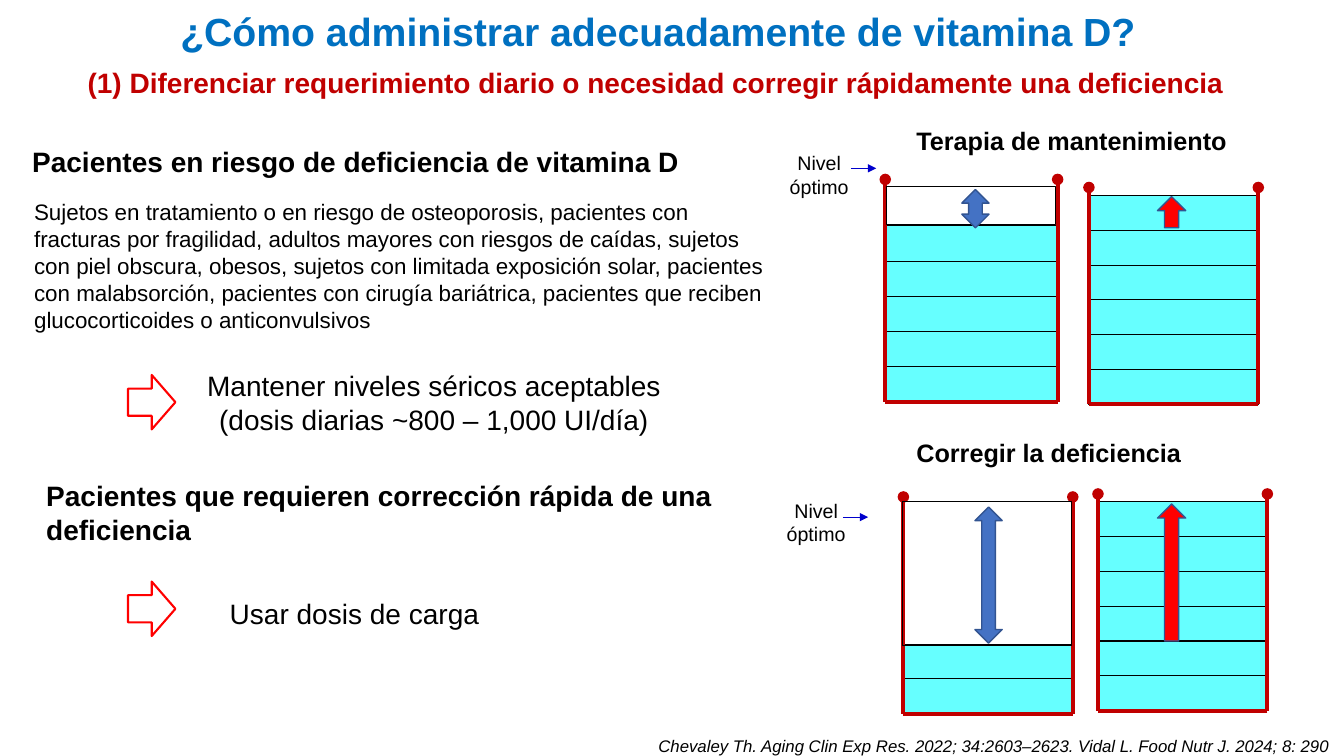
from lxml import etree
from pptx import Presentation
from pptx.dml.color import RGBColor
from pptx.enum.shapes import MSO_CONNECTOR, MSO_SHAPE
from pptx.enum.text import MSO_ANCHOR, PP_ALIGN
from pptx.oxml.ns import qn
from pptx.util import Inches, Pt

RECTANGLE = MSO_SHAPE.RECTANGLE
UP_ARROW = MSO_SHAPE.UP_ARROW
UP_DOWN_ARROW = MSO_SHAPE.UP_DOWN_ARROW
RIGHT_ARROW = MSO_SHAPE.RIGHT_ARROW
STRAIGHT = MSO_CONNECTOR.STRAIGHT
LEFT, CENTER, RIGHT = PP_ALIGN.LEFT, PP_ALIGN.CENTER, PP_ALIGN.RIGHT
TOP = MSO_ANCHOR.TOP

BLACK = RGBColor(0x00, 0x00, 0x00)
TITLE_BLUE = RGBColor(0x00, 0x70, 0xC0)
DARK_RED = RGBColor(0xC0, 0x00, 0x00)
RED = RGBColor(0xFF, 0x00, 0x00)
WATER = RGBColor(0x66, 0xFF, 0xFF)
ARROW_BLUE = RGBColor(0x44, 0x72, 0xC4)
ARROW_EDGE = RGBColor(0x32, 0x54, 0x91)
POINTER_BLUE = RGBColor(0x00, 0x00, 0xCC)

presentation = Presentation()
presentation.slide_width = Inches(13.33)
presentation.slide_height = Inches(7.5)
slide = presentation.slides.add_slide(presentation.slide_layouts[5])

# Grid of square cells: 13.33 columns by 7.5 rows
CELL = presentation.slide_height / 7.5


def add_shape(kind, box, fill, line, line_width):
    """Add a preset shape at box (left, top, width, height in cells)."""
    shape = slide.shapes.add_shape(kind, *[int(length * CELL) for length in box])
    shape.shadow.inherit = False
    if fill is None:
        shape.fill.background()
    else:
        shape.fill.solid()
        shape.fill.fore_color.rgb = fill
    shape.line.color.rgb = line
    shape.line.width = Pt(line_width)


def add_line(ends, color, width, end_tag=None, end_type=None):
    """Add a line along ends (x1, y1, x2, y2 in cells), with an optional end mark."""
    connector = slide.shapes.add_connector(STRAIGHT, *[int(length * CELL) for length in ends])
    connector.line.color.rgb = color
    connector.line.width = Pt(width)
    properties = connector._element.spPr
    if end_tag:
        etree.SubElement(properties.find(qn("a:ln")), qn(end_tag), type=end_type)
    etree.SubElement(properties, qn("a:effectLst"))


# Vessels: left, width, rim, base, layer height, number of filled layers
vessels = [
    (10.8, 1.68, 1.86, 4.01, 0.345, 6),
    (8.78, 1.71, 1.78, 3.99, 0.35, 5),
    (8.96, 1.68, 4.93, 7.08, 0.345, 2),
    (10.89, 1.68, 4.9, 7.05, 0.345, 6),
]
for left, width, rim, base, layer_height, layer_count in vessels:
    right = left + width
    for layer in range(layer_count, 0, -1):
        layer_box = (left, base - layer * layer_height, width, layer_height)
        add_shape(RECTANGLE, layer_box, WATER, BLACK, 0.75)
    for wall in (left, right):
        add_line((wall, rim, wall, base), DARK_RED, 2.75, "a:headEnd", "oval")
    add_line((right, base, left, base), DARK_RED, 2.75)

# Missing amount in the left vessels, replenished amount in the right ones
for empty_box in [(8.79, 1.85, 1.68, 0.38), (8.95, 4.98, 1.68, 1.42)]:
    add_shape(RECTANGLE, empty_box, None, BLACK, 0.75)
for top, height in [(1.88, 0.38), (5.03, 1.35)]:
    left = 9.54 if top < 4 else 9.67
    add_shape(UP_DOWN_ARROW, (left, top, 0.27, height), ARROW_BLUE, ARROW_EDGE, 1)
for top, height in [(1.95, 0.31), (5, 1.36)]:
    add_shape(UP_ARROW, (11.48, top, 0.28, height), RED, ARROW_EDGE, 1)

for left, level in [(8.44, 1.67), (8.36, 5.13)]:
    add_line((left, level, left + 0.25, level), POINTER_BLUE, 0.5, "a:tailEnd", "triangle")
for top in (3.72, 5.77):
    add_shape(RIGHT_ARROW, (1.27, top, 0.47, 0.54), None, RED, 1.5)

# Texts: box, wording, size, bold, italic, colour, alignment
title_text = ((0.11, 0.02, 12.83, 0.57), "¿Cómo administrar adecuadamente de vitamina D?",
              28, True, False, TITLE_BLUE, CENTER)
body_texts = [
    ((0.77, 0.6, 12.37, 0.44),
     "(1) Diferenciar requerimiento diario o necesidad corregir rápidamente una deficiencia",
     20, True, False, DARK_RED, LEFT),
    ((0.22, 1.38, 6.68, 0.44), "Pacientes en riesgo de deficiencia de vitamina D",
     20, True, False, BLACK, LEFT),
    ((0.24, 1.92, 7.44, 1.45),
     "Sujetos en tratamiento o en riesgo de osteoporosis, pacientes con fracturas por "
     "fragilidad, adultos mayores con riesgos de caídas, sujetos con piel obscura, obesos, "
     "sujetos con limitada exposición solar, pacientes con malabsorción, pacientes con "
     "cirugía bariátrica, pacientes que reciben glucocorticoides o anticonvulsivos",
     16, False, False, BLACK, LEFT),
    ((0.92, 3.61, 6.77, 0.77),
     "Mantener niveles séricos aceptables\n(dosis diarias ~800 – 1,000 UI/día)",
     20, False, False, BLACK, CENTER),
    ((0.36, 4.7, 7.54, 0.77), "Pacientes que requieren corrección rápida de una deficiencia",
     20, True, False, BLACK, LEFT),
    ((2.18, 5.87, 3.9, 0.44), "Usar dosis de carga", 20, False, False, BLACK, LEFT),
    ((8.99, 1.19, 3.31, 0.4), "Terapia de mantenimiento", 18, True, False, BLACK, LEFT),
    ((8.99, 4.29, 2.85, 0.4), "Corregir la deficiencia", 18, True, False, BLACK, LEFT),
    ((7.65, 1.45, 0.95, 0.57), "Nivel óptimo", 14, False, False, BLACK, CENTER),
    ((7.62, 4.9, 0.95, 0.57), "Nivel óptimo", 14, False, False, BLACK, CENTER),
    ((6.33, 7.25, 6.96, 0.3),
     "Chevaley Th. Aging Clin Exp Res. 2022; 34:2603–2623. Vidal L. Food Nutr J. 2024; 8: 290",
     12, False, True, BLACK, RIGHT),
]
for box, wording, size, bold, italic, color, alignment in [title_text, *body_texts]:
    left, top, width, height = [int(length * CELL) for length in box]
    if wording == title_text[1]:
        shape = slide.shapes.title
        shape.left, shape.top, shape.width, shape.height = left, top, width, height
    else:
        shape = slide.shapes.add_textbox(left, top, width, height)
    text_frame = shape.text_frame
    text_frame.text = wording
    text_frame.word_wrap = True
    text_frame.vertical_anchor = TOP
    for paragraph in text_frame.paragraphs:
        paragraph.alignment = alignment
        for run in paragraph.runs:
            run.font.name = "Arial"
            run.font.size = Pt(size)
            run.font.bold = bold
            run.font.italic = italic
            run.font.color.rgb = color

presentation.save("out.pptx")
